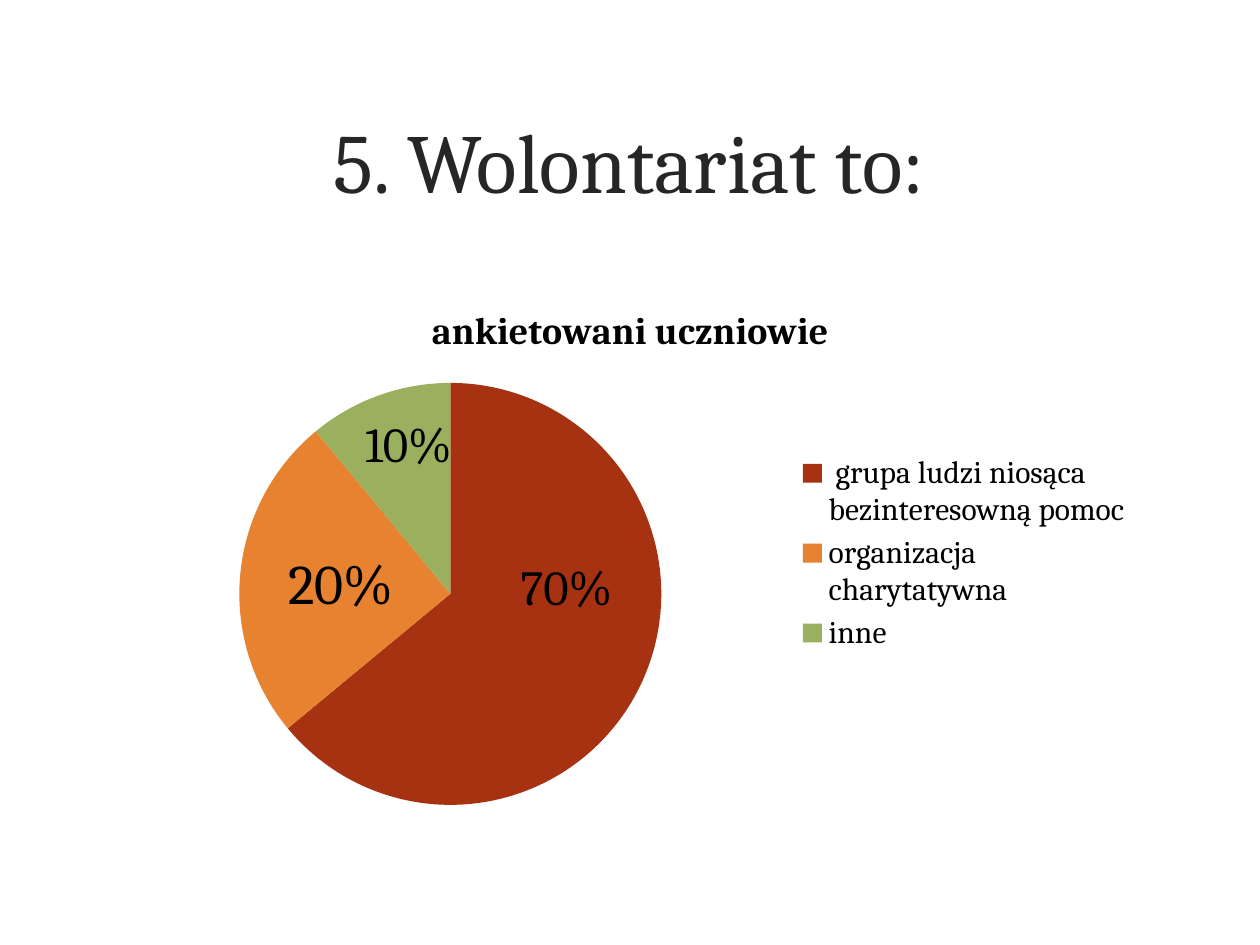
"""Build a survey slide with a pie chart of answers about volunteering."""
from dataclasses import dataclass

from pptx import Presentation
from pptx.chart.data import CategoryChartData
from pptx.dml.color import RGBColor
from pptx.enum import chart as charts, text
from pptx.oxml import parse_xml
from pptx.oxml.ns import nsdecls
from pptx.util import Pt


@dataclass(frozen=True)
class Theme:
    font: str = "Cambria"
    heading: str = "262626"
    ink: str = "000000"
    background: str = "FFFFFF"
    heading_size: float = 48
    chart_title_size: float = 21.6
    legend_size: float = 18


@dataclass(frozen=True)
class Answer:
    name: str
    value: int
    color: str


@dataclass(frozen=True)
class ShareLabel:
    wording: str
    left: float
    top: float
    width: float
    height: float
    size: float


THEME = Theme()
SERIES = "ankietowani uczniowie"
ANSWERS = [
    Answer(" grupa ludzi niosąca bezinteresowną pomoc", 64, "A63212"),
    Answer("organizacja charytatywna", 25, "E68230"),
    Answer("inne", 11, "9BB05E"),
]
LABELS = [
    ShareLabel("10%", 201.6, 232.5, 71.3, 41, 28),
    ShareLabel("20%", 157.7, 309.6, 79.2, 46, 32),
    ShareLabel("70%", 290.2, 314.6, 71.3, 41, 28),
]
PIE_LAYOUT = {"x": 0.12, "y": 0.18, "w": 0.41, "h": 0.79}


def style(font, size: float, color: str = THEME.ink, bold: bool = False) -> None:
    font.name = THEME.font
    font.size = Pt(size)
    font.bold = bold
    font.color.rgb = RGBColor.from_string(color)


def place(shape, left: float, top: float, width: float, height: float) -> None:
    shape.left, shape.top = Pt(left), Pt(top)
    shape.width, shape.height = Pt(width), Pt(height)


def add_heading(page, wording: str) -> None:
    title = page.shapes.title
    place(title, 43.2, 34.6, 632.9, 113.8)
    title.text_frame.vertical_anchor = text.MSO_ANCHOR.MIDDLE
    para = title.text_frame.paragraphs[0]
    para.alignment = text.PP_ALIGN.CENTER
    span = para.add_run()
    span.text = wording
    style(span.font, THEME.heading_size, THEME.heading)


def fix_plot_area(chart) -> None:
    plot_area = chart.plots[0]._element.getparent()
    for old in plot_area.findall("{*}layout"):
        plot_area.remove(old)
    modes = "".join(f'<c:{axis}Mode val="edge"/>' for axis in "xy")
    sizes = "".join(f'<c:{key} val="{value}"/>' for key, value in PIE_LAYOUT.items())
    plot_area.insert(0, parse_xml(
        f'<c:layout {nsdecls("c")}><c:manualLayout><c:layoutTarget val="inner"/>'
        f"{modes}{sizes}</c:manualLayout></c:layout>"))


def add_pie(page, answers: list[Answer]) -> None:
    data = CategoryChartData()
    data.categories = [answer.name for answer in answers]
    data.add_series(SERIES, [answer.value for answer in answers])
    frame = page.shapes.add_chart(
        charts.XL_CHART_TYPE.PIE, Pt(66.2), Pt(160.6), Pt(588.2), Pt(311), data)
    chart = frame.chart
    style(chart.font, THEME.legend_size)

    chart.has_title = True
    span = chart.chart_title.text_frame.paragraphs[0].add_run()
    span.text = SERIES
    style(span.font, THEME.chart_title_size, bold=True)
    chart.chart_title.include_in_layout = False

    chart.has_legend = True
    chart.legend.position = charts.XL_LEGEND_POSITION.RIGHT
    chart.legend.include_in_layout = False
    style(chart.legend.font, THEME.legend_size)

    plot = chart.plots[0]
    plot.vary_by_categories = True
    for index, answer in enumerate(answers):
        fill = plot.series[0].points[index].format.fill
        fill.solid()
        fill.fore_color.rgb = RGBColor.from_string(answer.color)
    fix_plot_area(chart)


def add_share(page, label: ShareLabel) -> None:
    box = page.shapes.add_textbox(
        Pt(label.left), Pt(label.top), Pt(label.width), Pt(label.height))
    box.text_frame.word_wrap = False
    box.text_frame.auto_size = text.MSO_AUTO_SIZE.SHAPE_TO_FIT_TEXT
    span = box.text_frame.paragraphs[0].add_run()
    span.text = label.wording
    style(span.font, label.size)


def main() -> None:
    deck = Presentation()
    deck.slide_width, deck.slide_height = Pt(720), Pt(540)
    page = deck.slides.add_slide(deck.slide_layouts.get_by_name("Title Only"))
    page.background.fill.solid()
    page.background.fill.fore_color.rgb = RGBColor.from_string(THEME.background)
    add_heading(page, "5. Wolontariat to:")
    add_pie(page, ANSWERS)
    for label in LABELS:
        add_share(page, label)
    deck.save("out.pptx")


if __name__ == "__main__":
    main()
